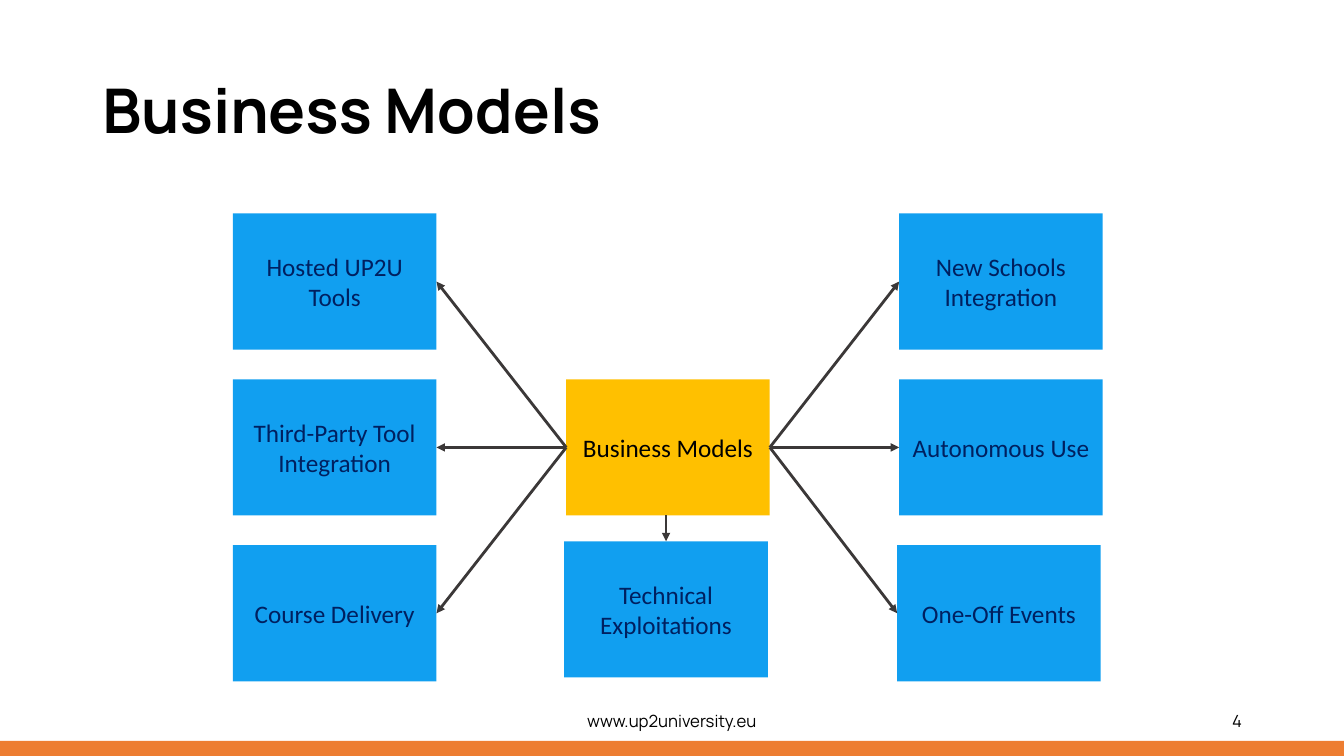
"""Build the Business Models slide: a hub box with arrows to seven models."""
from dataclasses import dataclass

from lxml import etree
from pptx import Presentation
from pptx.dml.color import RGBColor
from pptx.enum.shapes import MSO_CONNECTOR, MSO_SHAPE
from pptx.enum.text import MSO_ANCHOR, PP_ALIGN
from pptx.oxml.ns import qn
from pptx.shapes.autoshape import Shape
from pptx.shapes.connector import Connector
from pptx.slide import Slide
from pptx.util import Cm, Pt

RECT = MSO_SHAPE.RECTANGLE
LINE = MSO_CONNECTOR.STRAIGHT
MID = MSO_ANCHOR.MIDDLE
LEFT, MIDDLE, RIGHT = PP_ALIGN.LEFT, PP_ALIGN.CENTER, PP_ALIGN.RIGHT
TOP_SIDE, LEFT_SIDE, RIGHT_SIDE = 0, 1, 3

WIDE, HIGH = 5.13, 3.43
TOP, STEP = 5.38, 4.18
WEST, HUB_X, EAST = 5.87, 14.27, 22.66
BLUE, GOLD, NAVY, BLACK = "119FF0", "FFC000", "002060", "000000"
GREY, ORANGE = "3B3838", "ED7D31"


@dataclass
class Node:
    text: str
    x: float
    y: float
    fill: str = BLUE
    ink: str = NAVY


@dataclass
class Label:
    text: str
    x: float
    y: float
    w: float
    h: float
    align: PP_ALIGN
    size: int = 12
    bold: bool = False
    space: float = 1.0


HUB = Node("Business Models", HUB_X, TOP + STEP, GOLD, BLACK)
TECH = Node("Technical Exploitations", 14.22, 13.64)
WEST_NODES = [
    Node(text, WEST, TOP + row * STEP)
    for row, text in enumerate(
        ["Hosted UP2U Tools", "Third-Party Tool Integration", "Course Delivery"])
]
EAST_NODES = [
    Node("New Schools Integration", EAST, TOP),
    Node("Autonomous Use", EAST, TOP + STEP),
    Node("One-Off Events", 22.61, TOP + 2 * STEP),
]
LABELS = [
    Label("www.up2university.eu", 11.22, 17.65, 11.43, 1.02, MIDDLE),
    Label("4", 23.93, 17.65, 7.62, 1.02, RIGHT),
    Label("Business Models", 2.33, 1.02, 25.73, 3.68, LEFT, 44, True, 0.9),
]


def color(code: str) -> RGBColor:
    """Turn a hex string into a colour."""
    return RGBColor.from_string(code)


def write(shape: Shape, text: str, align: PP_ALIGN, ink: str,
          font: dict, space: float = 1.0) -> None:
    """Put one formatted paragraph into a shape."""
    frame = shape.text_frame
    frame.word_wrap = True
    frame.vertical_anchor = MID
    para = frame.paragraphs[0]
    para.alignment = align
    para.line_spacing = space
    run = para.add_run()
    run.text = text
    for name, value in font.items():
        setattr(run.font, name, value)
    run.font.color.rgb = color(ink)


def block(slide: Slide, x: float, y: float, w: float, h: float,
          fill: str) -> Shape:
    """Draw a plain filled rectangle."""
    shape = slide.shapes.add_shape(RECT, Cm(x), Cm(y), Cm(w), Cm(h))
    shape.shadow.inherit = False
    shape.fill.solid()
    shape.fill.fore_color.rgb = color(fill)
    shape.line.fill.background()
    return shape


def box(slide: Slide, node: Node) -> Shape:
    """Draw a node with its centred text."""
    shape = block(slide, node.x, node.y, WIDE, HIGH, node.fill)
    write(shape, node.text, MIDDLE, node.ink,
          {"name": "Calibri", "size": Pt(18)})
    return shape


def label(slide: Slide, item: Label) -> None:
    """Draw a text box."""
    shape = slide.shapes.add_textbox(
        Cm(item.x), Cm(item.y), Cm(item.w), Cm(item.h))
    font = {"name": "Manrope", "size": Pt(item.size), "bold": item.bold}
    write(shape, item.text, item.align, BLACK, font, item.space)


def arrow(slide: Slide, x: float, y: float, goal: Shape, side: int) -> Connector:
    """Draw an arrow from a point to the side of a box."""
    link = slide.shapes.add_connector(LINE, Cm(x), Cm(y), Cm(x), Cm(y))
    link.end_connect(goal, side)
    link.line.color.rgb = color(GREY)
    link.line.width = Pt(2)
    tail = etree.SubElement(link.line._get_or_add_ln(), qn("a:tailEnd"))
    tail.set("type", "triangle")
    etree.SubElement(link._element.spPr, qn("a:effectLst"))
    return link


def main() -> None:
    """Build and save the slide."""
    deck = Presentation()
    deck.slide_width, deck.slide_height = Cm(33.87), Cm(19.05)
    slide = deck.slides.add_slide(deck.slide_layouts[6])
    block(slide, 0, 18.67, 33.87, 0.38, ORANGE)
    for item in LABELS:
        label(slide, item)
    hub = box(slide, HUB)
    for nodes, start, end in ((WEST_NODES, LEFT_SIDE, RIGHT_SIDE),
                              (EAST_NODES, RIGHT_SIDE, LEFT_SIDE)):
        for node in nodes:
            link = arrow(slide, HUB.x, HUB.y, box(slide, node), end)
            link.begin_connect(hub, start)
    tech = box(slide, TECH)
    arrow(slide, TECH.x + WIDE / 2, HUB.y + HIGH, tech, TOP_SIDE)
    deck.save("out.pptx")


if __name__ == "__main__":
    main()
